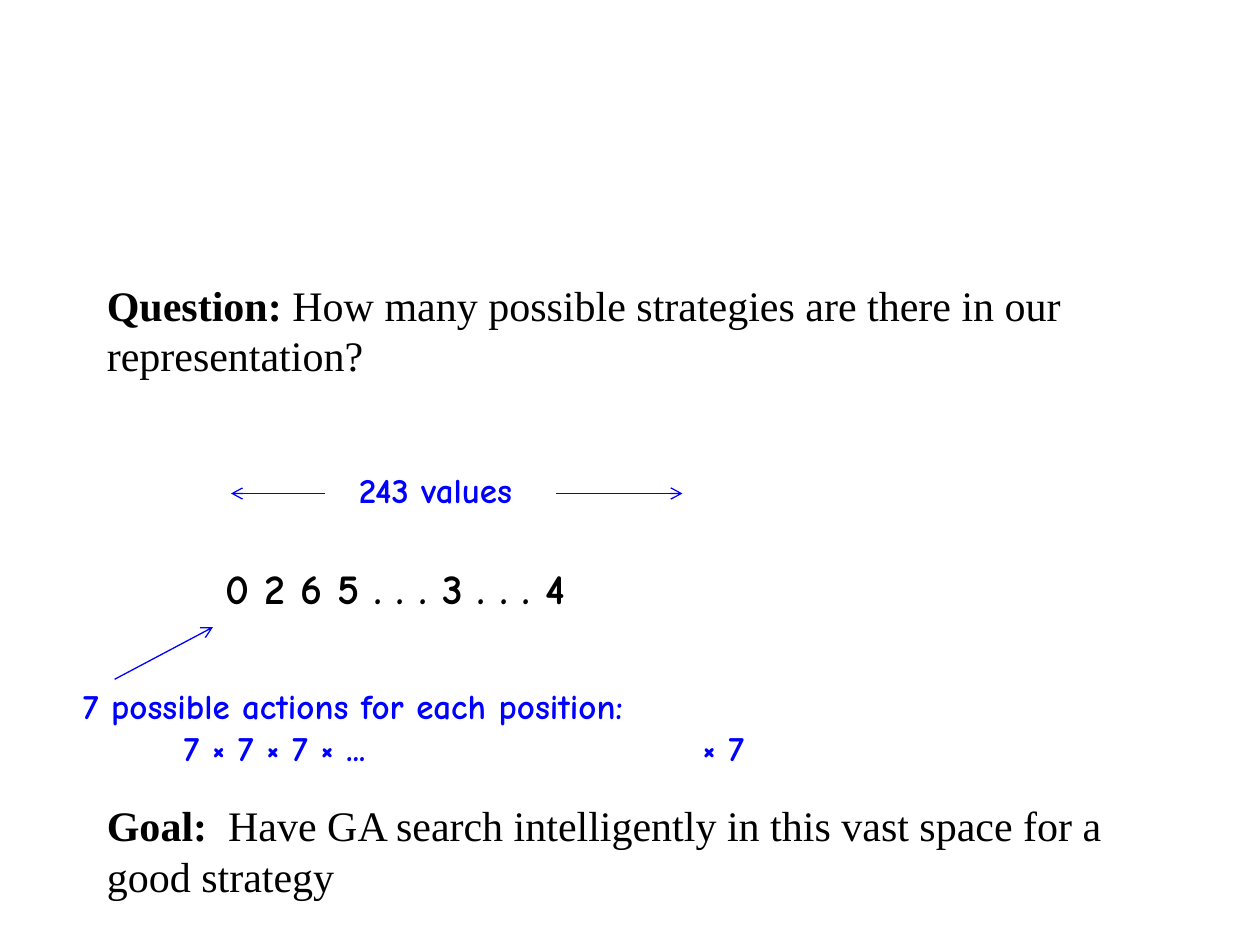
from lxml.etree import SubElement
from pptx import Presentation
from pptx.dml.color import RGBColor
from pptx.enum.shapes import MSO_CONNECTOR
from pptx.enum.text import MSO_AUTO_SIZE
from pptx.oxml.ns import qn
from pptx.util import Pt

COLORS = {"text": "000000", "note": "0000FF"}
SERIF, HAND = "Times New Roman", "Comic Neue"

deck = Presentation()
deck.slide_width, deck.slide_height = Pt(720), Pt(540)
page = deck.slides.add_slide(deck.slide_layouts[6])


def add_text(left, top, width, height, lines, font, size, color, wrap=True):
    """Add a text box; each line is a list of (text, bold) spans."""
    box = page.shapes.add_textbox(Pt(left), Pt(top), Pt(width), Pt(height))
    frame = box.text_frame
    frame.word_wrap = wrap
    frame.auto_size = MSO_AUTO_SIZE.SHAPE_TO_FIT_TEXT
    for index, spans in enumerate(lines):
        para = frame.add_paragraph() if index else frame.paragraphs[0]
        para.font.name, para.font.size = font, Pt(size)
        para.font.color.rgb = RGBColor.from_string(COLORS[color])
        for text, bold in spans:
            span = para.add_run()
            span.text, span.font.bold = text, bold
    return frame


# Question and goal
statements = [
    (156, "Question:", " How many possible strategies are there in our representation?"),
    (453.6, "Goal:", "  Have GA search intelligently in this vast space for a good strategy"),
]
for top, label, sentence in statements:
    frame = add_text(54, top, 612, 64.8, [[(label, True), (sentence, False)]],
                     SERIF, 24, "text")
    frame.paragraphs[0].line_spacing = Pt(28.8)

# Strategy string and its notes
add_text(121.7, 318.2, 282, 36, [[("0 2 6 5 . . . 3 . . . 4", True)]],
         HAND, 24, "text", wrap=False)
add_text(198, 264.2, 119, 31.7, [[("243 values", True)]],
         HAND, 20, "note", wrap=False)
actions = add_text(40.3, 387.4, 605, 55.4,
                   [[("7 possible actions for each position:", True)],
                    [("\t7 × 7 × 7 × ...\t× 7", True)]],
                   HAND, 20, "note")
tab_list = SubElement(actions.paragraphs[1]._p.get_or_add_pPr(), qn("a:tabLst"))
for position in (57.6, 354):
    SubElement(tab_list, qn("a:tab"), pos=str(Pt(position)), algn="l")

# Arrows
for start_x, start_y, end_x, end_y in [(318, 282, 390, 282),
                                       (186, 282, 132, 282),
                                       (65.5, 388.2, 121.7, 358.4)]:
    arrow = page.shapes.add_connector(MSO_CONNECTOR.STRAIGHT, Pt(start_x), Pt(start_y),
                                      Pt(end_x), Pt(end_y))
    arrow.line.color.rgb = RGBColor.from_string(COLORS["note"])
    arrow.line.width = Pt(0.75)
    SubElement(arrow.line._get_or_add_ln(), qn("a:tailEnd"), type="arrow")
    SubElement(arrow._element.spPr, qn("a:effectLst"))

deck.save("out.pptx")
